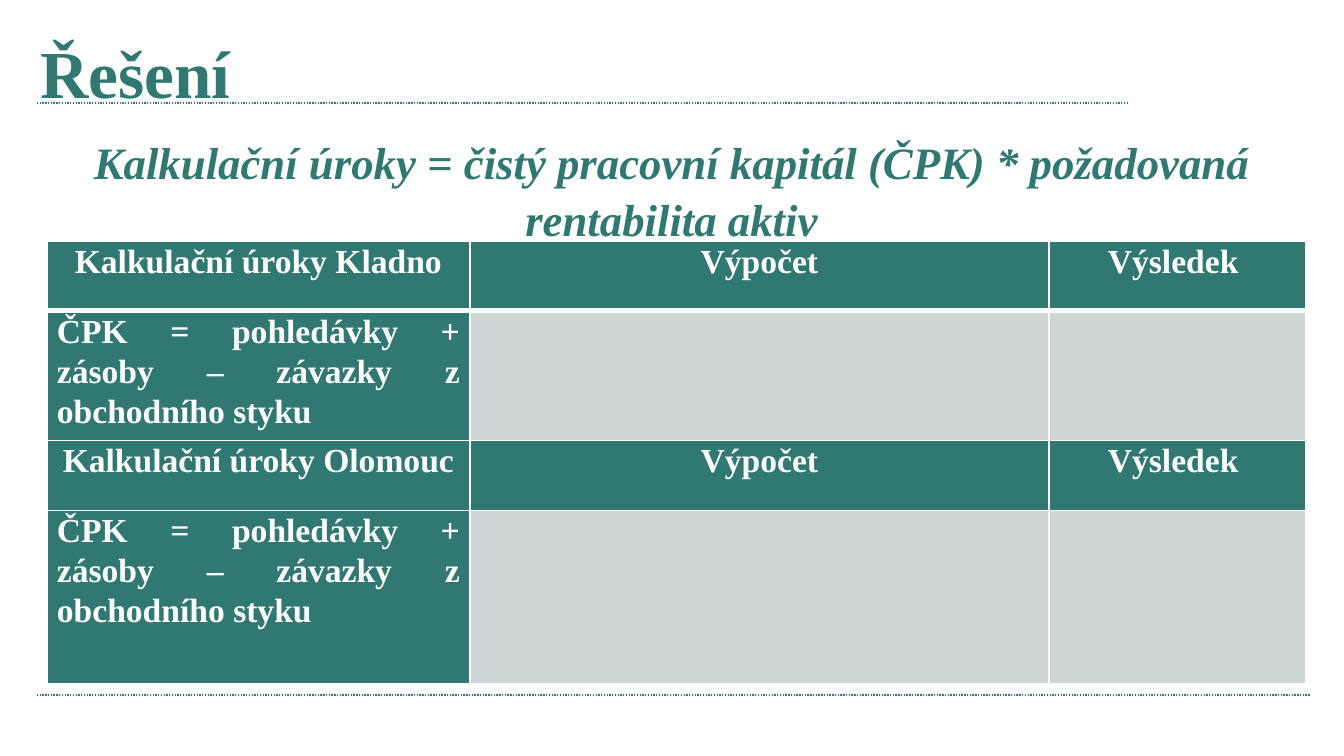
from dataclasses import dataclass
from lxml.etree import SubElement
from pptx import Presentation
from pptx.dml.color import RGBColor
from pptx.enum.dml import MSO_LINE
from pptx.enum.shapes import MSO_CONNECTOR
from pptx.enum.text import MSO_ANCHOR, PP_ALIGN
from pptx.oxml import parse_xml
from pptx.oxml.ns import nsdecls, qn
from pptx.slide import Slide
from pptx.table import _Cell as Cell
from pptx.text.text import TextFrame
from pptx.util import Emu, Pt


@dataclass(frozen=True)
class Theme:
    """Colours, font and type sizes."""
    green: str = "307871"
    grey: str = "CDD6D5"
    white: str = "FFFFFF"
    font: str = "Times New Roman"
    title: int = 36
    lead: int = 24
    cell: int = 18
    gap: float = 1.07


@dataclass(frozen=True)
class Rule:
    """Dotted horizontal line."""
    left: int
    right: int
    top: int


@dataclass(frozen=True)
class Block:
    """One town: a heading row and a formula row."""
    town: str
    head: int
    body: int


THEME = Theme()
RULES = [Rule(37, 1127, 103), Rule(37, 1310, 695)]
COLS = [423, 579, 257]
BLOCKS = [Block("Kladno", 70, 128), Block("Olomouc", 70, 173)]
FORMULA = "ČPK = pohledávky + zásoby – závazky z obchodního styku"
LEAD = "Kalkulační úroky = čistý pracovní kapitál (ČPK) * požadovaná rentabilita aktiv"


def px(count: int) -> Emu:
    """Turn px into EMU."""
    return Emu(round(count * 9144000 / 1344))


def write(frame: TextFrame, text: str, size: int, tone: str,
          align: PP_ALIGN, gap: float = 1.0, slant: bool = False) -> None:
    """Fill a frame with one bold run."""
    frame.word_wrap = True
    para = frame.paragraphs[0]
    para.alignment = align
    para.line_spacing = gap
    run = para.add_run()
    run.text = text
    font = run.font
    font.name, font.size = THEME.font, Pt(size)
    font.bold, font.italic = True, slant
    font.color.rgb = RGBColor.from_string(tone)


def draw_rule(slide: Slide, rule: Rule) -> None:
    """Draw one dotted line."""
    line = slide.shapes.add_connector(
        MSO_CONNECTOR.STRAIGHT, px(rule.left), px(rule.top), px(rule.right), px(rule.top))
    line.line.color.rgb = RGBColor.from_string(THEME.green)
    line.line.width = Pt(0.75)
    line.line.dash_style = MSO_LINE.ROUND_DOT
    SubElement(line._element.spPr, qn("a:effectLst"))


def paint(cell: Cell, tone: str, top: int, base: int) -> None:
    """Fill a cell and edge it in white."""
    cell.fill.solid()
    cell.fill.fore_color.rgb = RGBColor.from_string(tone)
    props = cell._tc.get_or_add_tcPr()
    for spot, (side, width) in enumerate(zip("LRTB", (1, 1, top, base))):
        props.insert(spot, parse_xml(
            f'<a:ln{side} {nsdecls("a")} w="{Pt(width)}"><a:solidFill>'
            f'<a:srgbClr val="{THEME.white}"/></a:solidFill></a:ln{side}>'))


def draw_table(slide: Slide, blocks: list[Block]) -> None:
    """Draw the table of blocks."""
    highs = [high for block in blocks for high in (block.head, block.body)]
    table = slide.shapes.add_table(
        len(highs), len(COLS), px(47), px(241), px(sum(COLS)), px(sum(highs))).table
    for col, width in zip(table.columns, COLS):
        col.width = px(width)
    for row, high in zip(table.rows, highs):
        row.height = px(high)
    texts = []
    for block in blocks:
        texts += [[f"Kalkulační úroky {block.town}", "Výpočet", "Výsledek "],
                  [FORMULA, "", ""]]
    for y, line in enumerate(texts):
        for x, text in enumerate(line):
            cell = table.cell(y, x)
            paint(cell, THEME.green if text else THEME.grey,
                  3 if y == 1 else 1, 3 if y == 0 else 1)
            if text:
                cell.margin_left = cell.margin_right = px(10)
                cell.margin_top = cell.margin_bottom = 0
                align = PP_ALIGN.JUSTIFY if y % 2 else PP_ALIGN.CENTER
                write(cell.text_frame, text, THEME.cell, THEME.white, align, THEME.gap)


def main() -> None:
    """Build and save the slide."""
    deck = Presentation()
    deck.slide_width, deck.slide_height = px(1344), px(756)
    slide = deck.slides.add_slide(deck.slide_layouts[5])
    for rule in RULES:
        draw_rule(slide, rule)
    title = slide.shapes.title
    title.left, title.top, title.width, title.height = map(px, (27, 19, 1185, 106))
    title.text_frame.vertical_anchor = MSO_ANCHOR.MIDDLE
    write(title.text_frame, "Řešení", THEME.title, THEME.green, PP_ALIGN.LEFT)
    lead = slide.shapes.add_textbox(*map(px, (58, 124, 1227, 231)))
    write(lead.text_frame, LEAD, THEME.lead, THEME.green, PP_ALIGN.CENTER, THEME.gap, True)
    draw_table(slide, BLOCKS)
    deck.save("out.pptx")


if __name__ == "__main__":
    main()
